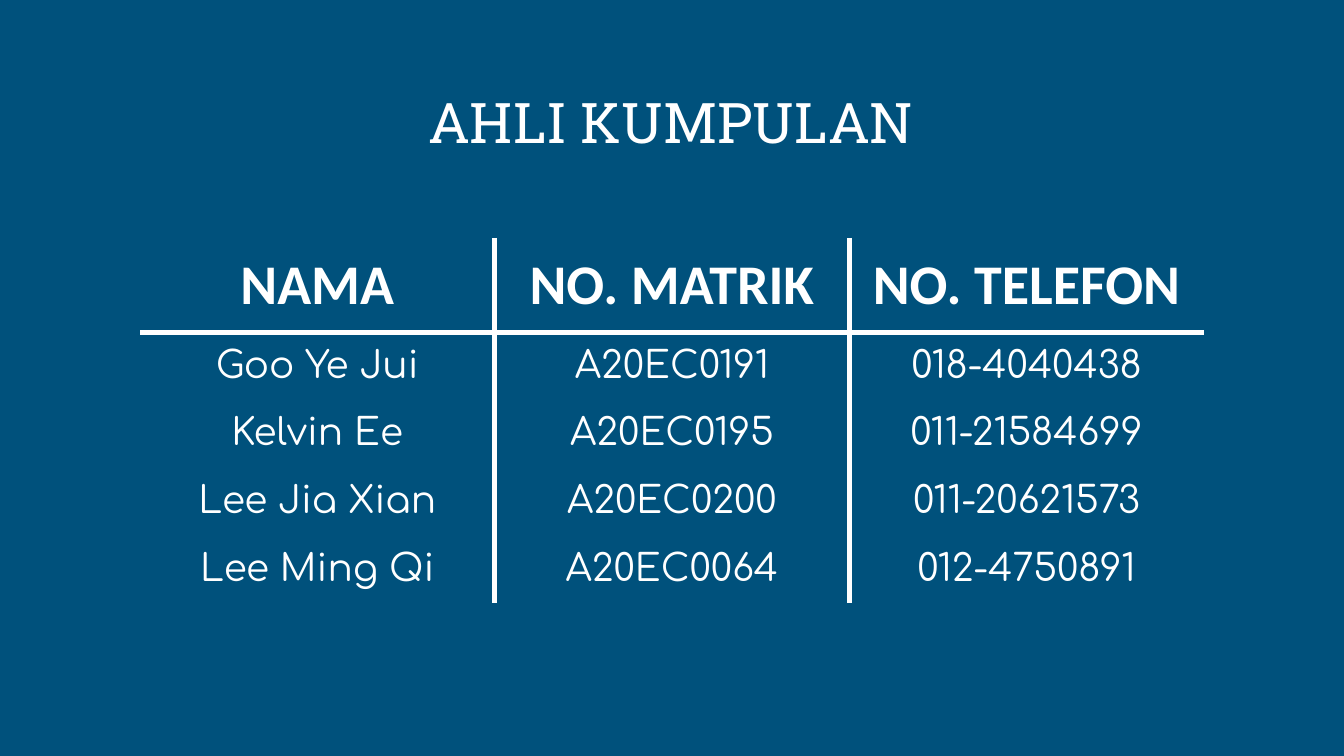
from dataclasses import dataclass

from lxml import etree
from pptx import Presentation
from pptx.dml.color import RGBColor
from pptx.enum.text import MSO_ANCHOR, MSO_AUTO_SIZE, PP_ALIGN
from pptx.oxml.ns import qn
from pptx.util import Pt

CENTER = PP_ALIGN.CENTER
BOTTOM, TOP = MSO_ANCHOR.BOTTOM, MSO_ANCHOR.TOP
NO_AUTOFIT = MSO_AUTO_SIZE.NONE
EMU_PER_PX = 914400 / 134.4
TITLE_ONLY = 5
INSET = 13
ROW_HEIGHT = 57

HEADINGS = ("NAMA", "NO. MATRIK", "NO. TELEFON")
MEMBERS = (
    ("Goo Ye Jui", "A20EC0191", "018-4040438"),
    ("Kelvin Ee", "A20EC0195", "011-21584699"),
    ("Lee Jia Xian", "A20EC0200", "011-20621573"),
    ("Lee Ming Qi", "A20EC0064", "012-4750891"),
)


@dataclass(frozen=True)
class Theme:
    """Colours, type and line widths of the slide."""

    background: str = "00517C"
    ink: str = "FFFFFF"
    rule: float = 3
    title: tuple = ("Roboto Slab", 30, False)
    heading: tuple = ("Calibri", 30, True)
    body: tuple = ("Comfortaa", 20, False)


THEME = Theme()


def px(length):
    """Turn whole pixels into EMU."""
    return round(length * EMU_PER_PX)


def apply_format(target, values):
    """Set each named attribute on the target."""
    for name, value in values.items():
        setattr(target, name, value)


def insets():
    """Return equal margins for a cell or text frame."""
    return {f"margin_{side}": px(INSET) for side in ("left", "top", "right", "bottom")}


def write_text(text_frame, text, style):
    """Write one centred paragraph in the given style."""
    name, size, bold = style
    paragraph = text_frame.paragraphs[0]
    paragraph.alignment = CENTER
    run = paragraph.add_run()
    run.text = text
    apply_format(run.font, {"name": name, "size": Pt(size), "bold": bold})
    run.font.color.rgb = RGBColor.from_string(THEME.ink)


def set_borders(cell, visible):
    """Rule the visible sides of a cell and clear the others."""
    properties = cell._tc.get_or_add_tcPr()
    for side in "LRTB":
        line = etree.SubElement(properties, qn(f"a:ln{side}"), w=str(Pt(THEME.rule)))
        if side in visible:
            fill = etree.SubElement(line, qn("a:solidFill"))
            etree.SubElement(fill, qn("a:srgbClr"), val=THEME.ink)
        else:
            etree.SubElement(line, qn("a:noFill"))


def add_title(slide, box, text):
    """Place the title in the given box."""
    title = slide.shapes.title
    apply_format(title, dict(zip(("left", "top", "width", "height"), map(px, box))))
    frame_format = {"vertical_anchor": BOTTOM, "word_wrap": True, "auto_size": NO_AUTOFIT}
    apply_format(title.text_frame, frame_format | insets())
    write_text(title.text_frame, text, THEME.title)


def add_member_table(slide, box, headings, members):
    """Place the member table with rules between columns and below the headings."""
    rows = (headings, *members)
    last_column = len(headings) - 1
    table = slide.shapes.add_table(len(rows), len(headings), *map(px, box)).table
    apply_format(table, {"first_row": False, "horz_banding": False})
    for row_index, values in enumerate(rows):
        table.rows[row_index].height = px(ROW_HEIGHT)
        style = THEME.body if row_index else THEME.heading
        horizontal = {0: "B", 1: "T"}.get(row_index, "")
        for column_index, value in enumerate(values):
            cell = table.cell(row_index, column_index)
            left = "L" if column_index else ""
            right = "R" if column_index < last_column else ""
            set_borders(cell, left + right + horizontal)
            cell.fill.background()
            apply_format(cell, {"vertical_anchor": TOP} | insets())
            write_text(cell.text_frame, value, style)


def main():
    """Build and save the group members slide."""
    presentation = Presentation()
    apply_format(presentation, {"slide_width": px(1344), "slide_height": px(756)})
    slide = presentation.slides.add_slide(presentation.slide_layouts[TITLE_ONLY])
    slide.background.fill.solid()
    slide.background.fill.fore_color.rgb = RGBColor.from_string(THEME.background)
    add_title(slide, (56, 67, 1230, 101), "AHLI KUMPULAN")
    table_height = ROW_HEIGHT * (len(MEMBERS) + 1)
    add_member_table(slide, (140, 238, 1064, table_height), HEADINGS, MEMBERS)
    presentation.save("out.pptx")


if __name__ == "__main__":
    main()
